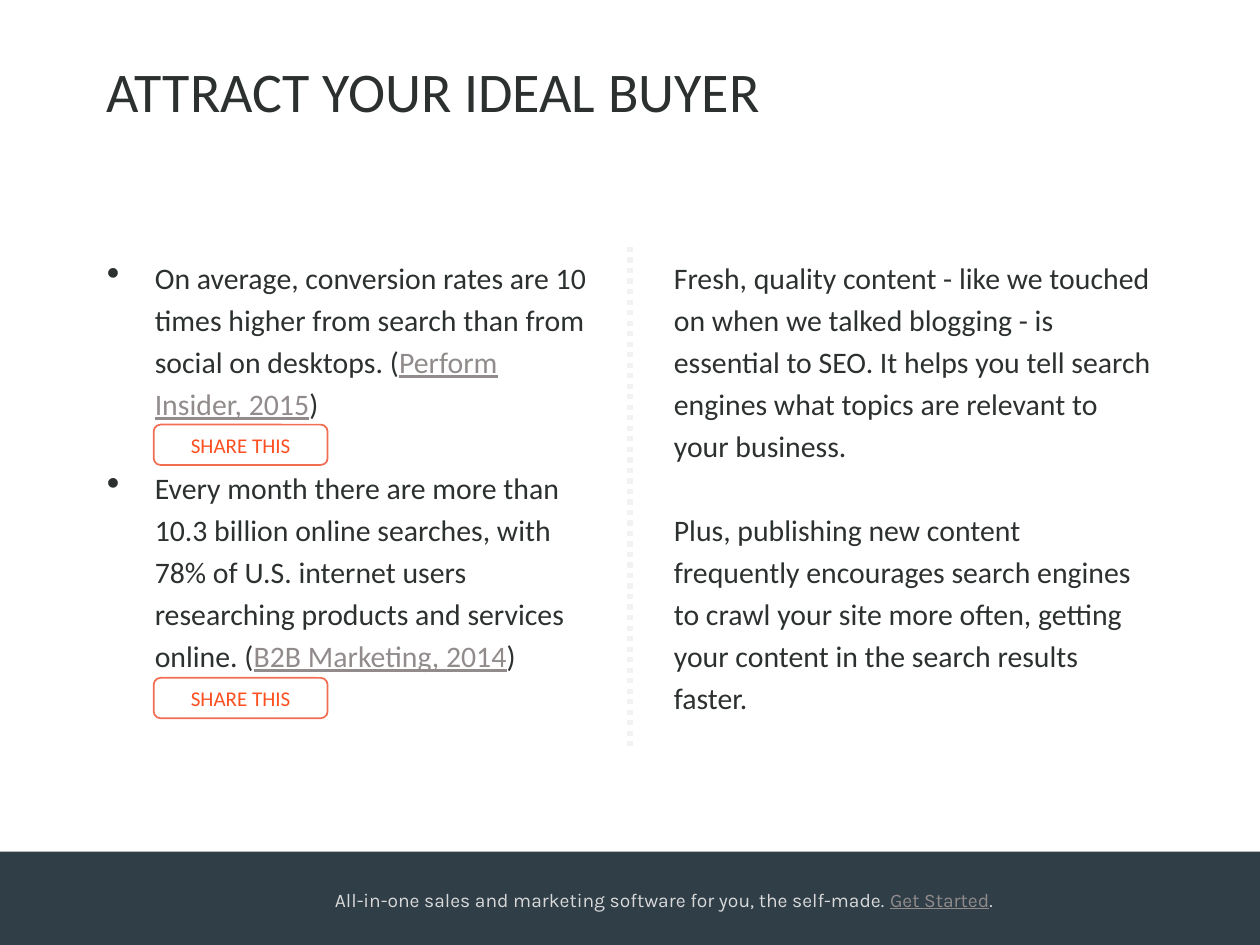
from dataclasses import dataclass
from typing import Any

from lxml.etree import SubElement
from pptx import Presentation
from pptx.dml.color import RGBColor
from pptx.enum.dml import MSO_LINE
from pptx.enum.shapes import MSO_CONNECTOR, MSO_SHAPE
from pptx.enum.text import MSO_ANCHOR, PP_ALIGN
from pptx.oxml.ns import qn
from pptx.util import Inches, Pt

DARK, GREY, PALE = "2C3130", "918C8B", "D9D9D9"
BODY = {"name": "Calibri", "size": Pt(17)}
LINE = {"line_spacing": Pt(24)}
GAP = {**LINE, "space_after": Pt(24)}


@dataclass
class Run:
    text: str
    hue: str = DARK
    under: bool = False


@dataclass
class Para:
    runs: list[Run]
    form: dict[str, Any]
    bullet: bool = False


@dataclass
class Block:
    left: float
    top: float
    width: float
    height: float
    font: dict[str, Any]
    paras: list[Para]


def color(code: str) -> RGBColor:
    return RGBColor.from_string(code)


def apply(target: Any, values: dict[str, Any]) -> None:
    for key, value in values.items():
        setattr(target, key, value)


def add_bullet(para: Any) -> None:
    props = para._p.get_or_add_pPr()
    props.set("marL", str(Inches(0.38)))
    props.set("indent", str(Inches(-0.38)))
    SubElement(props, qn("a:buSzPct"), val="125000")
    SubElement(props, qn("a:buChar"), char="•")


def fill_para(para: Any, item: Para, font: dict[str, Any]) -> None:
    if item.bullet:
        add_bullet(para)
    apply(para, item.form)
    for part in item.runs:
        run = para.add_run()
        run.text = part.text
        apply(run.font, {**font, "underline": part.under})
        run.font.color.rgb = color(part.hue)


def add_block(slide: Any, block: Block) -> None:
    box = slide.shapes.add_textbox(Inches(block.left), Inches(block.top),
                                   Inches(block.width), Inches(block.height))
    frame = box.text_frame
    frame.word_wrap = True
    for num, item in enumerate(block.paras):
        para = frame.add_paragraph() if num else frame.paragraphs[0]
        fill_para(para, item, block.font)


def add_button(slide: Any, top: float) -> None:
    shape = slide.shapes.add_shape(MSO_SHAPE.ROUNDED_RECTANGLE, Inches(1.22),
                                   Inches(top), Inches(1.38), Inches(0.32))
    shape.shadow.inherit = False
    shape.fill.background()
    shape.line.color.rgb = color("F26E53")
    shape.line.width = Pt(1)
    shape.text_frame.vertical_anchor = MSO_ANCHOR.MIDDLE
    label = Para([Run("SHARE THIS", "FC5021")], {"alignment": PP_ALIGN.CENTER})
    fill_para(shape.text_frame.paragraphs[0], label, {**BODY, "size": Pt(12)})


def add_band(slide: Any) -> None:
    band = slide.shapes.add_shape(MSO_SHAPE.RECTANGLE, 0, Inches(6.76),
                                  Inches(10), Inches(0.74))
    band.shadow.inherit = False
    band.fill.solid()
    band.fill.fore_color.rgb = color("303E48")
    band.line.fill.background()


def add_rule(slide: Any) -> None:
    rule = slide.shapes.add_connector(MSO_CONNECTOR.STRAIGHT, Inches(5),
                                      Inches(1.96), Inches(5), Inches(5.96))
    rule.line.color.rgb = color("F2F2F2")
    apply(rule.line, {"width": Pt(3), "dash_style": MSO_LINE.ROUND_DOT})
    SubElement(rule._element.spPr, qn("a:effectLst"))


FOOTER = Block(2.56, 7, 6.75, 0.29, {"name": "Karla", "size": Pt(11)}, [
    Para([Run("All-in-one sales and marketing software for you, the self-made. ", PALE),
          Run("Get Started", GREY, True), Run(".", PALE)], {}),
])
TITLE = Block(0.75, 0.6, 8.5, 1, {**BODY, "size": Pt(32)}, [
    Para([Run("ATTRACT YOUR IDEAL BUYER")], LINE),
])
FACTS = Block(0.75, 1.96, 4.02, 4, BODY, [
    Para([Run("On average, conversion rates are 10 times higher from search "
              "than from social on desktops. ("),
          Run("Perform Insider, 2015", GREY, True), Run(")")], GAP, True),
    Para([Run("Every month there are more than 10.3 billion online searches, with "
              "78% of U.S. internet users researching products and services online. ("),
          Run("B2B Marketing, 2014", GREY, True), Run(")")], LINE, True),
])
ADVICE = Block(5.25, 1.96, 4, 4, BODY, [
    Para([Run("Fresh, quality content - like we touched on when we talked blogging - "
              "is essential to SEO. It helps you tell search engines what topics "
              "are relevant to your business.")], GAP),
    Para([Run("Plus, publishing new content frequently encourages search engines to "
              "crawl your site more often, getting your content in the search "
              "results faster.")], LINE),
])


def main() -> None:
    deck = Presentation()
    deck.slide_width, deck.slide_height = Inches(10), Inches(7.5)
    slide = deck.slides.add_slide(deck.slide_layouts[6])

    # Footer band and column divider
    add_band(slide)
    add_rule(slide)

    # Text blocks
    for block in (FOOTER, TITLE, FACTS, ADVICE):
        add_block(slide, block)

    # Share buttons under each fact
    for top in (3.37, 5.38):
        add_button(slide, top)

    deck.save("out.pptx")


if __name__ == "__main__":
    main()
